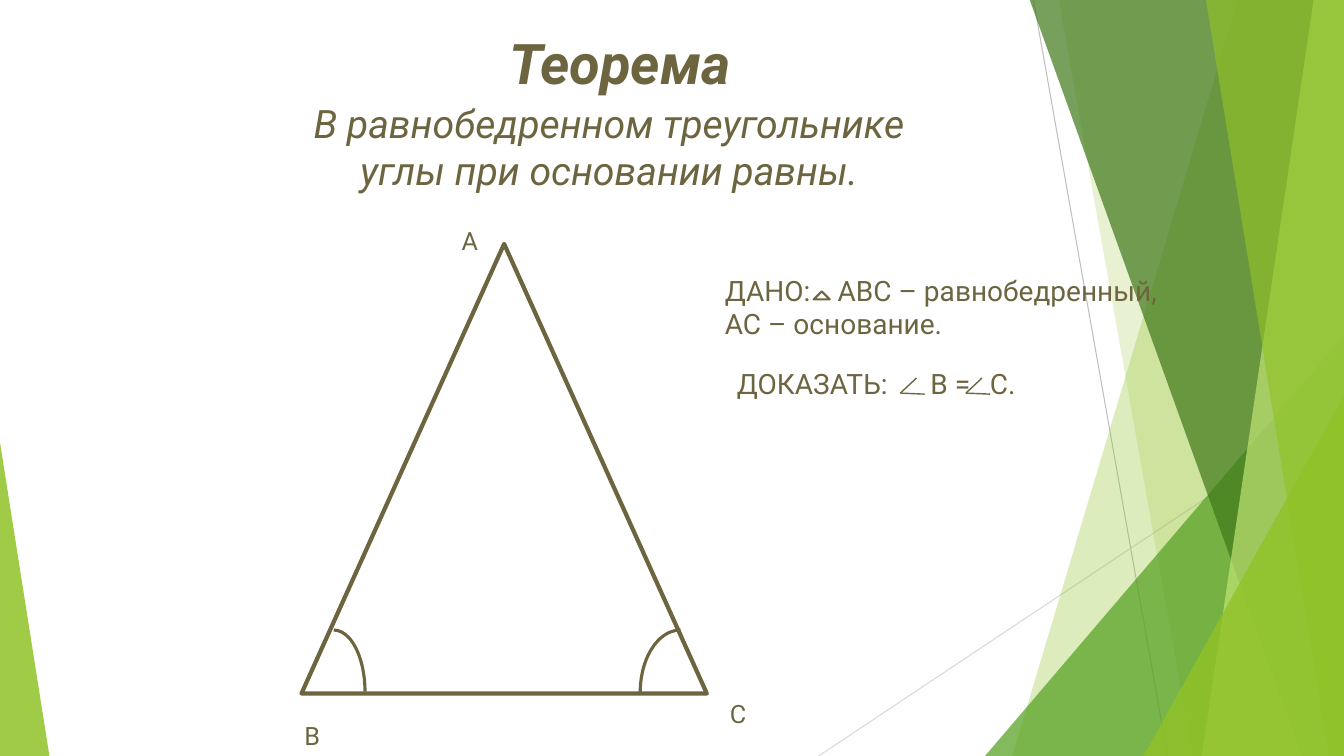
from pptx import Presentation
from pptx.dml.color import RGBColor
from pptx.enum.shapes import MSO_CONNECTOR, MSO_SHAPE
from pptx.enum.text import MSO_ANCHOR, MSO_AUTO_SIZE, PP_ALIGN
from pptx.oxml.ns import qn
from pptx.util import Inches, Pt
from lxml.etree import SubElement

INK = "6D6540"
FONT = "Roboto"


def paint(color_format, color, opacity=100):
    """Set a hex colour, with the opacity in percent."""
    color_format.rgb = RGBColor.from_string(color)
    if opacity < 100:
        srgb = color_format._xFill.find(qn("a:srgbClr"))
        SubElement(srgb, qn("a:alpha"), val=str(opacity * 1000))


def write(box, text, size, tabs=(), align=PP_ALIGN.LEFT, wrap=True, **styles):
    """Fill a box with one paragraph; tabs are inches from the text edge."""
    frame = box.text_frame
    frame.word_wrap = wrap
    frame.auto_size = MSO_AUTO_SIZE.NONE
    frame.vertical_anchor = MSO_ANCHOR.TOP
    para = frame.paragraphs[0]
    para.alignment = align
    if tabs:
        tab_list = SubElement(para._p.get_or_add_pPr(), qn("a:tabLst"))
        for tab in tabs:
            SubElement(tab_list, qn("a:tab"), pos=str(Inches(tab)), algn="l")
    span = para.add_run()
    span.text = text
    for name, value in {"name": FONT, "size": Pt(size), **styles}.items():
        setattr(span.font, name, value)
    paint(span.font.color, INK)


deck = Presentation()
deck.slide_width, deck.slide_height = Inches(13.33), Inches(7.5)
page = deck.slides.add_slide(deck.slide_layouts[5])
shapes = page.shapes

# Lines: the two backdrop rays, then the two arms of each angle sign
rays = [
    (10.25, 0, 11.58, 7.5, "BFBFBF", 0.75),
    (13.33, 4.03, 8.12, 7.5, "D9D9D9", 0.75),
]
angle_arms = [
    (x, 3.9, x + dx, 3.9 + dy, INK, 1)
    for x in (9.58, 8.93)
    for dx, dy in ((0.24, 0.01), (0.16, -0.15))
]
for x1, y1, x2, y2, color, weight in rays + angle_arms:
    line = shapes.add_connector(
        MSO_CONNECTOR.STRAIGHT, Inches(x1), Inches(y1), Inches(x2), Inches(y2)
    )
    paint(line.line.color, color)
    line.line.width = Pt(weight)
    SubElement(line._element.spPr, qn("a:effectLst"))

# Backdrop, back to front: bands (top x, bottom x) run to the right edge,
# corners (left, top, width, height, apex) stand on the bottom edge
backdrop = [
    ("band", (12.28, 10.04), "90C226", 30),
    ("band", (10.5, 11.83), "90C226", 20),
    ("corner", (9.77, 3.33, 3.56, 4.17, 1), "54A021", 72),
    ("band", (10.21, 12.91), "3F7819", 70),
    ("band", (13.03, 11.92), "C0E474", 70),
    ("band", (11.96, 13.18), "90C226", 65),
    ("corner", (11.34, 3.93, 1.99, 3.57, 1), "90C226", 80),
    ("corner", (0, 4.39, 0.49, 3.11, 0), "90C226", 85),
]
for kind, place, color, opacity in backdrop:
    if kind == "band":
        top_x, bottom_x = place
        outline = [(13.33, -0.01), (13.33, 7.5), (bottom_x, 7.5)]
        builder = shapes.build_freeform(Inches(top_x), Inches(-0.01))
        builder.add_line_segments([(Inches(x), Inches(y)) for x, y in outline])
        facet = builder.convert_to_shape()
    else:
        *frame, apex = place
        facet = shapes.add_shape(
            MSO_SHAPE.ISOSCELES_TRIANGLE, *[Inches(v) for v in frame]
        )
        facet.adjustments[0] = apex
    facet.shadow.inherit = False
    facet.fill.solid()
    paint(facet.fill.fore_color, color, opacity)
    facet.line.fill.background()

# Triangle ABC, the triangle sign and the arcs at B and C (arc angles x 0.6)
figures = [
    (MSO_SHAPE.ISOSCELES_TRIANGLE, (2.99, 2.42, 4.02, 4.46), 3, (0.5,)),
    (MSO_SHAPE.ARC, (3.0, 6.25, 0.62, 1.22), 2.25, (162, 0)),
    (MSO_SHAPE.ARC, (6.35, 6.25, 0.8, 1.24), 2.25, (108, 162)),
    (MSO_SHAPE.ISOSCELES_TRIANGLE, (8.07, 2.89, 0.16, 0.08), 1.5, (0.5,)),
]
for preset, frame, weight, adjustments in figures:
    figure = shapes.add_shape(preset, *[Inches(v) for v in frame])
    for index, value in enumerate(adjustments):
        figure.adjustments[index] = value
    figure.shadow.inherit = False
    figure.fill.background()
    paint(figure.line.color, INK)
    figure.line.width = Pt(weight)

title = shapes.title
title.left, title.top = Inches(4.95), Inches(0.23)
title.width, title.height = Inches(3.86), Inches(0.77)
write(title, "Теорема", 40, bold=True, italic=True)

texts = [
    ((2.76, 0.94, 6.56, 1.04),
     "В равнобедренном треугольнике углы при основании равны.", 28,
     {"align": PP_ALIGN.CENTER, "italic": True}),
    ((7.09, 2.66, 4.57, 0.77),
     "ДАНО:\tАВС – равнобедренный, АС – основание.", 20, {"tabs": [1.12]}),
    ((7.21, 3.59, 4.45, 0.44),
     "ДОКАЗАТЬ:\tВ =\tС.", 20, {"tabs": [1.92, 2.51]}),
    ((4.48, 2.19, 0.35, 0.4), "A", 18, {"wrap": False}),
    ((2.92, 7.1, 0.31, 0.4), "B", 18, {}),
    ((7.14, 6.88, 0.31, 0.4), "C", 18, {}),
]
for frame, text, size, options in texts:
    box = shapes.add_textbox(*[Inches(v) for v in frame])
    write(box, text, size, **options)

deck.save("out.pptx")
